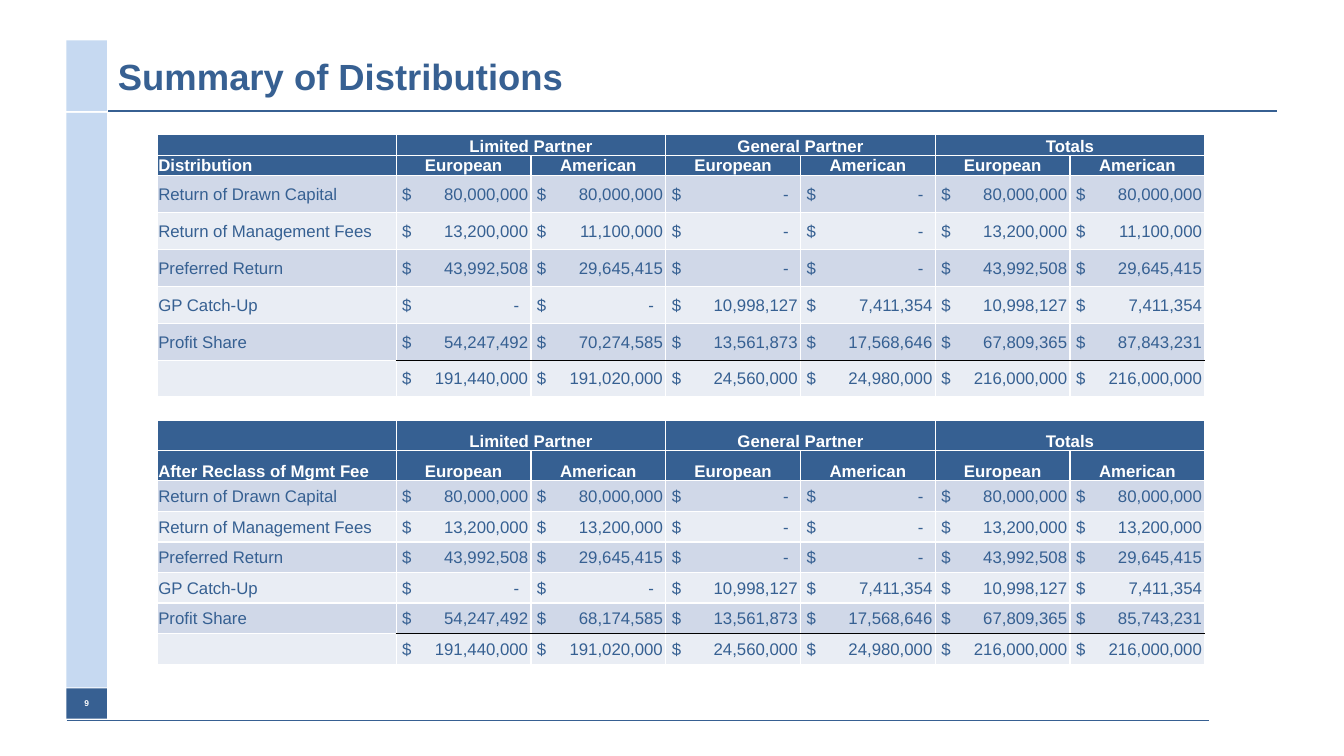
from dataclasses import dataclass

from lxml.etree import SubElement
from pptx import Presentation
from pptx.dml.color import RGBColor
from pptx.enum.shapes import MSO_CONNECTOR as Connector, MSO_SHAPE as Shape
from pptx.enum.text import MSO_ANCHOR as Anchor, PP_ALIGN as Align
from pptx.oxml.ns import qn
from pptx.util import Inches, Pt

TITLE = "Summary of Distributions"
PAGE_NUMBER = "9"
GROUPS = ["Limited Partner", "General Partner", "Totals"]
METHODS = ["European", "American"]

# Label, then limited partner (European, American), general partner (European, American)
DRAWN_CAPITAL = ("Return of Drawn Capital", 80000000, 80000000, 0, 0)
PREFERRED_RETURN = ("Preferred Return", 43992508, 29645415, 0, 0)
CATCH_UP = ("GP Catch-Up", 0, 0, 10998127, 7411354)
DISTRIBUTIONS = [
    DRAWN_CAPITAL,
    ("Return of Management Fees", 13200000, 11100000, 0, 0),
    PREFERRED_RETURN,
    CATCH_UP,
    ("Profit Share", 54247492, 70274585, 13561873, 17568646),
]
RECLASSIFIED = [
    DRAWN_CAPITAL,
    ("Return of Management Fees", 13200000, 13200000, 0, 0),
    PREFERRED_RETURN,
    CATCH_UP,
    ("Profit Share", 54247492, 68174585, 13561873, 17568646),
]
# Heading, rows, top, height, header row height
TABLES = [
    ("Distribution", DISTRIBUTIONS, 1.33, 2.58, 0.19),
    ("After Reclass of Mgmt Fee", RECLASSIFIED, 4.17, 2.42, 0.3),
]


@dataclass(frozen=True)
class Theme:
    font: str = "Arial"
    accent: str = "376092"
    table_blue: str = "366092"
    sidebar: str = "C6D9F1"
    bands: tuple = ("D0D8E8", "E9EDF4")
    white: str = "FFFFFF"
    black: str = "000000"
    title_size: int = 26
    table_size: int = 12
    page_size: int = 6


THEME = Theme()
TABLE_LEFT, TABLE_WIDTH, LABEL_WIDTH = 1.56, 10.39, 2.37
SIDEBAR_LEFT, SIDEBAR_WIDTH = 0.66, 0.4
AMOUNT_INSET, AMOUNT_TAB, DASH_TAB = 0.06, 1.25, 1.16
HEADER_ROWS = 2


def color(value):
    return RGBColor.from_string(value)


def format_text(paragraph, size, text_color, bold, align=Align.LEFT):
    paragraph.alignment = align
    for run in paragraph.runs:
        font = run.font
        font.name, font.size, font.bold = THEME.font, Pt(size), bold
        font.color.rgb = color(text_color)


def add_rule(slide, left, right, y, width):
    line = slide.shapes.add_connector(
        Connector.STRAIGHT, Inches(left), Inches(y), Inches(right), Inches(y))
    line.line.color.rgb = color(THEME.accent)
    line.line.width = Pt(width)
    SubElement(line._element.spPr, qn("a:effectLst"))


def add_sidebar_block(slide, top, height, fill):
    block = slide.shapes.add_shape(
        Shape.RECTANGLE, Inches(SIDEBAR_LEFT), Inches(top), Inches(SIDEBAR_WIDTH), Inches(height))
    block.shadow.inherit = False
    block.fill.solid()
    block.fill.fore_color.rgb = color(fill)
    block.line.fill.background()
    return block


def set_borders(cell, top=(THEME.white, 1), bottom=(THEME.white, 1)):
    side = (THEME.white, 1)
    properties = cell._tc.get_or_add_tcPr()
    for tag, (line_color, width) in zip(("lnL", "lnR", "lnT", "lnB"), (side, side, top, bottom)):
        line = SubElement(properties, qn(f"a:{tag}"), w=str(Pt(width)))
        fill = SubElement(line, qn("a:solidFill"))
        SubElement(fill, qn("a:srgbClr"), val=line_color)


def add_right_tab(paragraph, position):
    tabs = SubElement(paragraph._p.get_or_add_pPr(), qn("a:tabLst"))
    SubElement(tabs, qn("a:tab"), pos=str(Inches(position)), algn="r")


def table_grid(heading, rows):
    """Return all cell values, with partner totals and column sums worked out."""
    grid = [[""] + [text for group in GROUPS for text in (group, "")],
            [heading] + METHODS * len(GROUPS)]
    amounts = [[le, la, ge, ga, le + ge, la + ga] for _, le, la, ge, ga in rows]
    grid += [[row[0]] + values for row, values in zip(rows, amounts)]
    grid.append([""] + [sum(column) for column in zip(*amounts)])
    return grid


def fill_cell(cell, value, row, column, last_row):
    is_header = row < HEADER_ROWS
    is_amount = isinstance(value, int)
    rule = (THEME.black, 0.5)
    borders = {}
    if column and row == last_row:
        borders["top"] = rule
    if column and row == last_row - 1:
        borders["bottom"] = rule
    set_borders(cell, **borders)
    cell.fill.solid()
    cell.fill.fore_color.rgb = color(THEME.table_blue if is_header else THEME.bands[row % 2])
    cell.margin_left = Inches(AMOUNT_INSET if is_amount else 0.01)
    cell.margin_right = cell.margin_top = Inches(0.01)
    cell.margin_bottom = 0
    cell.vertical_anchor = Anchor.BOTTOM if is_header else Anchor.MIDDLE

    paragraph = cell.text_frame.paragraphs[0]
    if is_amount:
        add_right_tab(paragraph, AMOUNT_TAB if value else DASH_TAB)
        paragraph.text = f"$\t{value:,}" if value else "$\t-"
    elif value:
        paragraph.text = value
    else:
        SubElement(paragraph._p, qn("a:endParaRPr"), sz=str(THEME.table_size * 100))
    format_text(paragraph, THEME.table_size, THEME.white if is_header else THEME.table_blue,
                is_header, Align.CENTER if is_header and column else Align.LEFT)


def add_distribution_table(slide, heading, rows, top, height, header_height):
    grid = table_grid(heading, rows)
    row_count, column_count = len(grid), len(grid[0])
    table = slide.shapes.add_table(
        row_count, column_count, Inches(TABLE_LEFT), Inches(top),
        Inches(TABLE_WIDTH), Inches(height)).table
    table.first_row = table.horz_banding = False

    amount_width = (TABLE_WIDTH - LABEL_WIDTH) / (column_count - 1)
    for index, column in enumerate(table.columns):
        column.width = Inches(amount_width if index else LABEL_WIDTH)
    body_height = (height - HEADER_ROWS * header_height) / (row_count - HEADER_ROWS)
    for index, row in enumerate(table.rows):
        row.height = Inches(header_height if index < HEADER_ROWS else body_height)

    for row, values in enumerate(grid):
        for column, value in enumerate(values):
            fill_cell(table.cell(row, column), value, row, column, row_count - 1)
    for column in range(1, column_count, len(METHODS)):
        table.cell(0, column).merge(table.cell(0, column + len(METHODS) - 1))


def add_title(slide):
    title = slide.shapes.title
    title.left, title.top = Inches(1.07), Inches(0.4)
    title.width, title.height = Inches(11.58), Inches(0.7)
    title.text_frame.text = TITLE
    title.text_frame.vertical_anchor = Anchor.MIDDLE
    format_text(title.text_frame.paragraphs[0], THEME.title_size, THEME.accent, True)


def main():
    presentation = Presentation()
    presentation.slide_width, presentation.slide_height = Inches(13.33), Inches(7.5)
    slide = presentation.slides.add_slide(presentation.slide_layouts[5])

    add_rule(slide, 0.66, 11.99, 7.15, 0.75)
    add_sidebar_block(slide, 1.12, 5.7, THEME.sidebar)
    add_sidebar_block(slide, 0.4, 0.7, THEME.sidebar)
    add_rule(slide, 1.07, 12.67, 1.1, 1)
    page_block = add_sidebar_block(slide, 6.83, 0.3, THEME.accent)
    page_block.text_frame.text = PAGE_NUMBER
    page_block.text_frame.vertical_anchor = Anchor.MIDDLE
    format_text(page_block.text_frame.paragraphs[0], THEME.page_size, THEME.white, True, Align.CENTER)

    add_title(slide)
    for table in TABLES:
        add_distribution_table(slide, *table)
    presentation.save("out.pptx")


if __name__ == "__main__":
    main()
